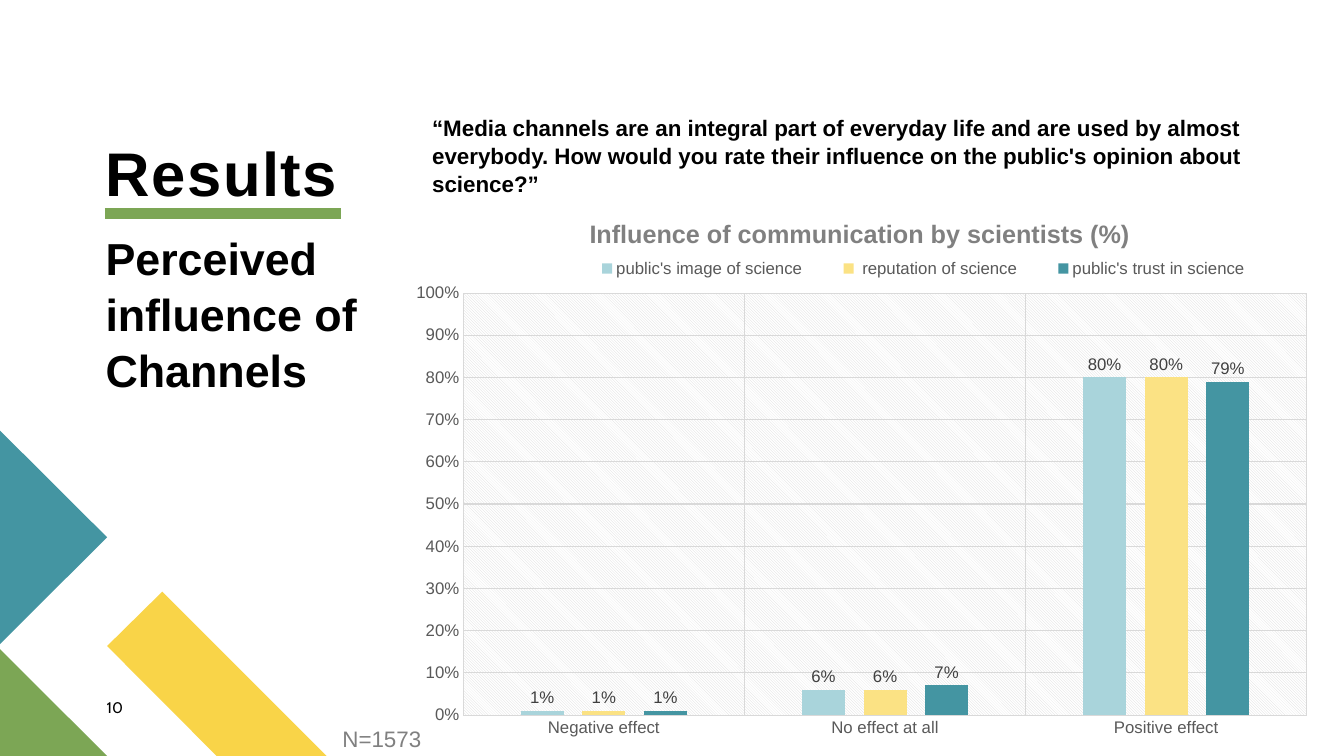
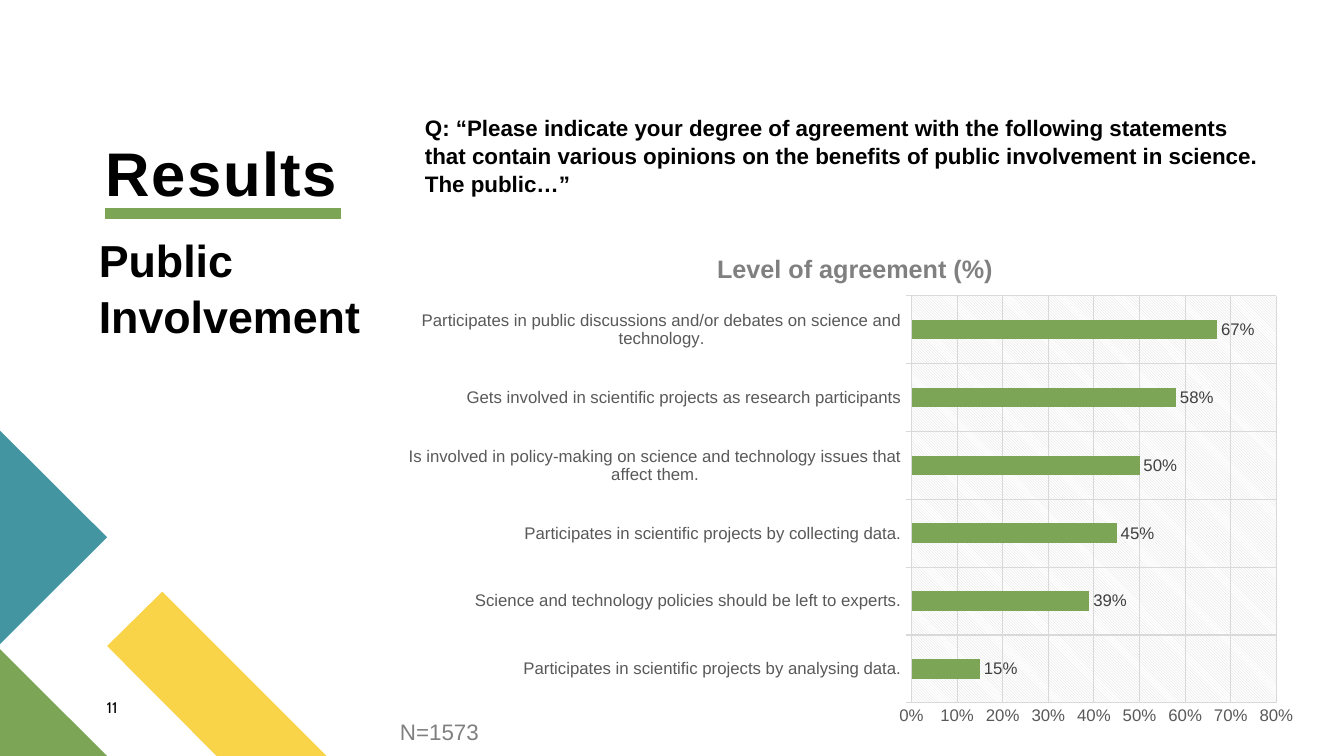
import pptx
import pptx.chart.data
import pptx.dml.color
import pptx.enum.chart
import pptx.enum.dml
import pptx.enum.text
import pptx.oxml
import pptx.oxml.ns
import pptx.util
from pptx.dml.color import RGBColor
from pptx.util import Cm, Pt

BLACK = RGBColor(0x00, 0x00, 0x00)
WHITE = RGBColor(0xFF, 0xFF, 0xFF)
CAPTION_GREY = RGBColor(0x80, 0x80, 0x80)
AXIS_GREY = RGBColor(0x59, 0x59, 0x59)
LABEL_GREY = RGBColor(0x40, 0x40, 0x40)
GRID_GREY = RGBColor(0xD9, 0xD9, 0xD9)
GREEN = RGBColor(0x7C, 0xA6, 0x55)
TEAL = RGBColor(0x44, 0x95, 0xA2)
YELLOW = RGBColor(0xF9, 0xD4, 0x48)
PALE_TEAL = RGBColor(0xA9, 0xD4, 0xDB)
PALE_YELLOW = RGBColor(0xFB, 0xE2, 0x84)

FONT = "Arial"
LINE_SPACING = 1.05

CORNER_PIECES = [
    (YELLOW, [(8.23, 19.05), (5.46, 19.05), (2.7, 16.28), (4.09, 14.91)]),
    (GREEN, [(2.7, 19.05), (0, 19.05), (0, 16.36)]),
    (TEAL, [(0, 10.85), (2.7, 13.54), (0, 16.23)]),
]

RESULTS = [
    {
        "number": "10",
        "topic": ("Perceived influence of Channels", (2.41, 5.61, 7.72, 4.37)),
        "question": (
            "“Media channels are an integral part of everyday life and are used by almost "
            "everybody. How would you rate their influence on the public's opinion about "
            "science?”",
            (10.64, 2.72, 22.58, 2.31),
        ),
        "sample": (8.38, 18.11, 3, 0.94),
        "kind": pptx.enum.chart.XL_CHART_TYPE.COLUMN_CLUSTERED,
        "box": (10.13, 4.8, 23.06, 14.05),
        "heading": "Influence of communication by scientists (%)",
        "heading_at": (0.2, 0.04),
        "plot_at": (0.067, 0.184, 0.922, 0.757),
        "legend_at": (0.18, 0.11, 0.78, 0.06),
        "top": 1,
        "gap": 267,
        "overlap": -43,
        "ticks": pptx.enum.chart.XL_TICK_MARK.NONE,
        "answers": ["Negative effect", "No effect at all", "Positive effect"],
        "series": [
            ("public's image of science", PALE_TEAL, [0.01, 0.06, 0.8]),
            (" reputation of science", PALE_YELLOW, [0.01, 0.06, 0.8]),
            ("public's trust in science", TEAL, [0.01, 0.07, 0.79]),
        ],
    },
    {
        "number": "11",
        "topic": ("Public Involvement", (2.24, 5.66, 7.32, 3)),
        "question": (
            "Q: “Please indicate your degree of agreement with the following statements "
            "that contain various opinions on the benefits of public involvement in science.\n"
            "The public…”",
            (10.46, 2.72, 21.77, 2.31),
        ),
        "sample": (9.83, 17.93, 3, 0.94),
        "kind": pptx.enum.chart.XL_CHART_TYPE.BAR_CLUSTERED,
        "box": (9.83, 5.74, 23.22, 12.78),
        "heading": "Level of agreement (%)",
        "heading_at": (0.35, 0.04),
        "plot_at": (0.566, 0.134, 0.396, 0.803),
        "legend_at": None,
        "top": 0.8,
        "gap": 247,
        "overlap": 0,
        "ticks": pptx.enum.chart.XL_TICK_MARK.OUTSIDE,
        "answers": [
            "Participates in scientific projects by analysing data.",
            "Science and technology policies should be left to experts.",
            "Participates in scientific projects by collecting data.",
            "Is involved in policy-making on science and technology issues that affect them.",
            "Gets involved in scientific projects as research participants",
            "Participates in public discussions and/or debates on science and technology.",
        ],
        "series": [("Series 1", GREEN, [0.15, 0.39, 0.45, 0.5, 0.58, 0.67])],
    },
]


def add_text(slide, text, box, size, color=BLACK, bold=False, font=FONT, inset=None):
    frame = slide.shapes.add_textbox(*map(Cm, box)).text_frame
    frame.word_wrap = True
    if inset is not None:
        frame.margin_left = frame.margin_right = Cm(inset)
        frame.margin_top = frame.margin_bottom = Cm(inset)
    frame.text = text
    for paragraph in frame.paragraphs:
        paragraph.line_spacing = LINE_SPACING
        paragraph.font.name = font
        paragraph.font.size = Pt(size)
        paragraph.font.bold = bold
        paragraph.font.color.rgb = color


def place(part, position, inner=False):
    for old in part.findall(pptx.oxml.ns.qn("c:layout")):
        part.remove(old)
    target = '<c:layoutTarget val="inner"/>' if inner else ""
    modes = "".join(f'<c:{side}Mode val="edge"/>' for side in "xy")
    values = "".join(f'<c:{key} val="{value}"/>' for key, value in zip("xywh", position))
    layout = pptx.oxml.parse_xml(
        f'<c:layout {pptx.oxml.ns.nsdecls("c")}><c:manualLayout>'
        f"{target}{modes}{values}</c:manualLayout></c:layout>"
    )
    before = ("c:tx", "c:legendPos")
    index = sum(child.tag in map(pptx.oxml.ns.qn, before) for child in part)
    part.insert(index, layout)


prs = pptx.Presentation()
prs.slide_width = Cm(33.87)
prs.slide_height = Cm(19.05)

for result in RESULTS:
    slide = prs.slides.add_slide(prs.slide_layouts[5])

    for color, points in CORNER_PIECES:
        corners = [(Cm(x), Cm(y)) for x, y in points]
        builder = slide.shapes.build_freeform(*corners[0])
        builder.add_line_segments(corners[1:], close=True)
        piece = builder.convert_to_shape()
        piece.shadow.inherit = False
        piece.fill.solid()
        piece.fill.fore_color.rgb = color
        piece.line.fill.background()

    underline = slide.shapes.add_connector(
        pptx.enum.shapes.MSO_CONNECTOR.STRAIGHT, Cm(2.64), Cm(5.38), Cm(8.59), Cm(5.38)
    )
    underline.line.color.rgb = GREEN
    underline.line.width = Pt(8)
    underline._element.spPr.append(
        pptx.oxml.parse_xml(f'<a:effectLst {pptx.oxml.ns.nsdecls("a")}/>')
    )

    title = slide.shapes.title
    title.left, title.top, title.width, title.height = map(Cm, (2.67, 3.58, 13.72, 1.7))
    frame = title.text_frame
    frame.margin_left = frame.margin_right = frame.margin_top = frame.margin_bottom = 0
    frame.vertical_anchor = pptx.enum.text.MSO_ANCHOR.BOTTOM
    frame.auto_size = pptx.enum.text.MSO_AUTO_SIZE.NONE
    frame.text = "Results"
    heading = frame.paragraphs[0]
    heading.alignment = pptx.enum.text.PP_ALIGN.LEFT
    heading.line_spacing = 0.9
    heading.font.name = FONT
    heading.font.size = Pt(44)
    heading.font.bold = True
    heading.font.color.rgb = BLACK
    heading.runs[0]._r.get_or_add_rPr().set("spc", "100")

    add_text(slide, result["number"], (2.69, 17.58, 1.45, 0.69), 11, font="Cabin", inset=0)
    add_text(slide, *result["topic"], 32, bold=True)
    add_text(slide, *result["question"], 16, bold=True)

    data = pptx.chart.data.CategoryChartData(number_format="0%")
    data.categories = result["answers"]
    for name, color, values in result["series"]:
        data.add_series(name, values)
    chart = slide.shapes.add_chart(result["kind"], *map(Cm, result["box"]), data).chart
    chart.font.name = FONT
    chart.font.size = Pt(12)
    chart.font.color.rgb = AXIS_GREY

    chart.has_title = True
    chart.chart_title.text_frame.text = result["heading"]
    caption = chart.chart_title.text_frame.paragraphs[0].font
    caption.name = FONT
    caption.size = Pt(18)
    caption.bold = True
    caption.color.rgb = CAPTION_GREY
    place(chart.chart_title._element, result["heading_at"])

    chart.has_legend = result["legend_at"] is not None
    if chart.has_legend:
        chart.legend.position = pptx.enum.chart.XL_LEGEND_POSITION.BOTTOM
        chart.legend.include_in_layout = False
        place(chart.legend._element, result["legend_at"])

    for axis in (chart.category_axis, chart.value_axis):
        axis.has_major_gridlines = True
        axis.major_gridlines.format.line.color.rgb = GRID_GREY
        axis.major_gridlines.format.line.width = Pt(0.75)
        axis.major_tick_mark = pptx.enum.chart.XL_TICK_MARK.NONE
        axis.minor_tick_mark = pptx.enum.chart.XL_TICK_MARK.NONE
    chart.category_axis.major_tick_mark = result["ticks"]
    chart.category_axis.format.line.color.rgb = GRID_GREY
    chart.category_axis.format.line.width = Pt(0.75)
    chart.value_axis.format.line.fill.background()
    chart.value_axis.minimum_scale = 0
    chart.value_axis.maximum_scale = result["top"]
    chart.value_axis.major_unit = 0.1
    chart.value_axis.tick_labels.number_format = "0%"
    chart.value_axis.tick_labels.number_format_is_linked = False

    plot = chart.plots[0]
    plot.vary_by_categories = False
    plot.gap_width = result["gap"]
    plot.overlap = result["overlap"]
    for series, (name, color, values) in zip(plot.series, result["series"]):
        series.format.fill.solid()
        series.format.fill.fore_color.rgb = color
        labels = series.data_labels
        labels.show_value = True
        labels.position = pptx.enum.chart.XL_LABEL_POSITION.OUTSIDE_END
        labels.number_format = "0%"
        labels.number_format_is_linked = False
        labels.font.name = FONT
        labels.font.size = Pt(12)
        labels.font.color.rgb = LABEL_GREY

    plot_area = chart._chartSpace.chart.plotArea
    place(plot_area, result["plot_at"], inner=True)
    plot_area.append(
        pptx.oxml.parse_xml(
            f'<c:spPr {pptx.oxml.ns.nsdecls("c", "a")}><a:pattFill prst="ltDnDiag">'
            f'<a:fgClr><a:srgbClr val="{GRID_GREY}"/></a:fgClr>'
            f'<a:bgClr><a:srgbClr val="{WHITE}"/></a:bgClr></a:pattFill></c:spPr>'
        )
    )

    add_text(slide, "N=1573", result["sample"], 16, CAPTION_GREY)

prs.save("out.pptx")
